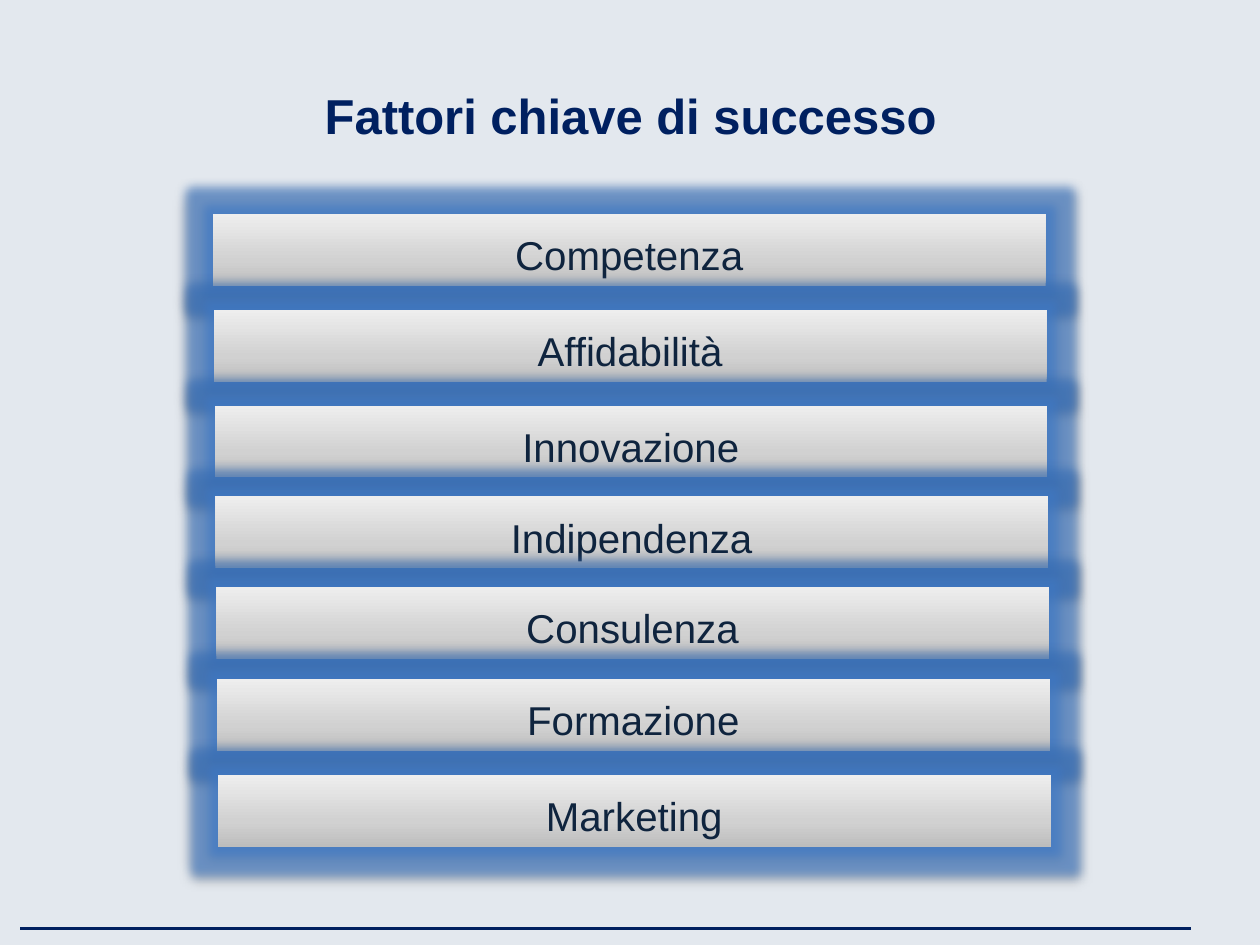
from lxml import etree
from pptx import Presentation
from pptx.dml.color import RGBColor
from pptx.enum.shapes import MSO_CONNECTOR, MSO_SHAPE
from pptx.enum.text import MSO_ANCHOR, PP_ALIGN
from pptx.oxml import parse_xml
from pptx.util import Inches, Pt

RECT = MSO_SHAPE.RECTANGLE
STRAIGHT = MSO_CONNECTOR.STRAIGHT
MIDDLE = MSO_ANCHOR.MIDDLE
CENTER = PP_ALIGN.CENTER
NS = "http://schemas.openxmlformats.org/drawingml/2006/main"

FONT = "Arial"
NAVY = "002060"
INK = "0F243E"
BACKGROUND = "E3E8EE"
FACTORS = [
    ("Competenza", 1.7),
    ("Affidabilità", 2.46),
    ("Innovazione", 3.22),
    ("Indipendenza", 3.94),
    ("Consulenza", 4.66),
    ("Formazione", 5.39),
    ("Marketing", 6.15),
]
GRADIENT = f"""<a:gradFill xmlns:a="{NS}" rotWithShape="1"><a:gsLst>
<a:gs pos="0"><a:srgbClr val="BDBDBD"/></a:gs>
<a:gs pos="35000"><a:srgbClr val="D1D1D1"/></a:gs>
<a:gs pos="100000"><a:srgbClr val="EEEEEE"/></a:gs>
</a:gsLst><a:lin ang="16200000" scaled="1"/></a:gradFill>"""
EFFECTS = f"""<a:effectLst xmlns:a="{NS}">
<a:glow rad="139700"><a:srgbClr val="3E7AC9"><a:alpha val="60000"/></a:srgbClr></a:glow>
<a:outerShdw blurRad="40000" dist="20000" dir="5400000" rotWithShape="0">
<a:srgbClr val="000000"><a:alpha val="38000"/></a:srgbClr></a:outerShdw>
</a:effectLst>"""


def rgb(color):
    return RGBColor.from_string(color)


def write(tf, text, size, color, bold=False):
    tf.word_wrap = True
    tf.vertical_anchor = MIDDLE
    p = tf.paragraphs[0]
    p.text = text
    p.alignment = CENTER
    p.font.name = FONT
    p.font.size = Pt(size)
    p.font.bold = bold
    p.font.color.rgb = rgb(color)
    return p


def add_title(s, text, left, top, width, height):
    sp = s.shapes.title
    sp.left, sp.top = Inches(left), Inches(top)
    sp.width, sp.height = Inches(width), Inches(height)
    tf = sp.text_frame
    tf.margin_left = tf.margin_right = Inches(0.11)
    tf.margin_top = tf.margin_bottom = Inches(0.06)
    write(tf, text, 28, NAVY, bold=True)


def add_bar(s, text, left, top, width, height):
    sp = s.shapes.add_shape(RECT, Inches(left), Inches(top), Inches(width), Inches(height))
    sp.line.fill.background()
    outline = sp.line._get_or_add_ln()
    outline.addprevious(parse_xml(GRADIENT))
    outline.addnext(parse_xml(EFFECTS))
    write(sp.text_frame, text, 23, INK).line_spacing = 1.2


def add_factors(s, left, width, bar_height, drift):
    for i, (text, top) in enumerate(FACTORS):
        add_bar(s, text, left + i * drift, top, width, bar_height)


def add_footer_rule(s, left, right, y):
    rule = s.shapes.add_connector(STRAIGHT, Inches(left), Inches(y), Inches(right), Inches(y))
    rule.line.color.rgb = rgb(NAVY)
    rule.line.width = Pt(2)
    etree.SubElement(rule._element.spPr, f"{{{NS}}}effectLst")


def main():
    prs = Presentation()
    prs.slide_width, prs.slide_height = Inches(10), Inches(7.5)
    s = prs.slides.add_slide(prs.slide_layouts[5])
    s.background.fill.solid()
    s.background.fill.fore_color.rgb = rgb(BACKGROUND)
    add_footer_rule(s, 0.16, 9.45, 7.37)
    add_title(s, "Fattori chiave di successo", 0.28, 0.52, 9.45, 0.79)
    add_factors(s, left=1.69, width=6.61, bar_height=0.57, drift=0.04 / 6)
    prs.save("out.pptx")


if __name__ == "__main__":
    main()
